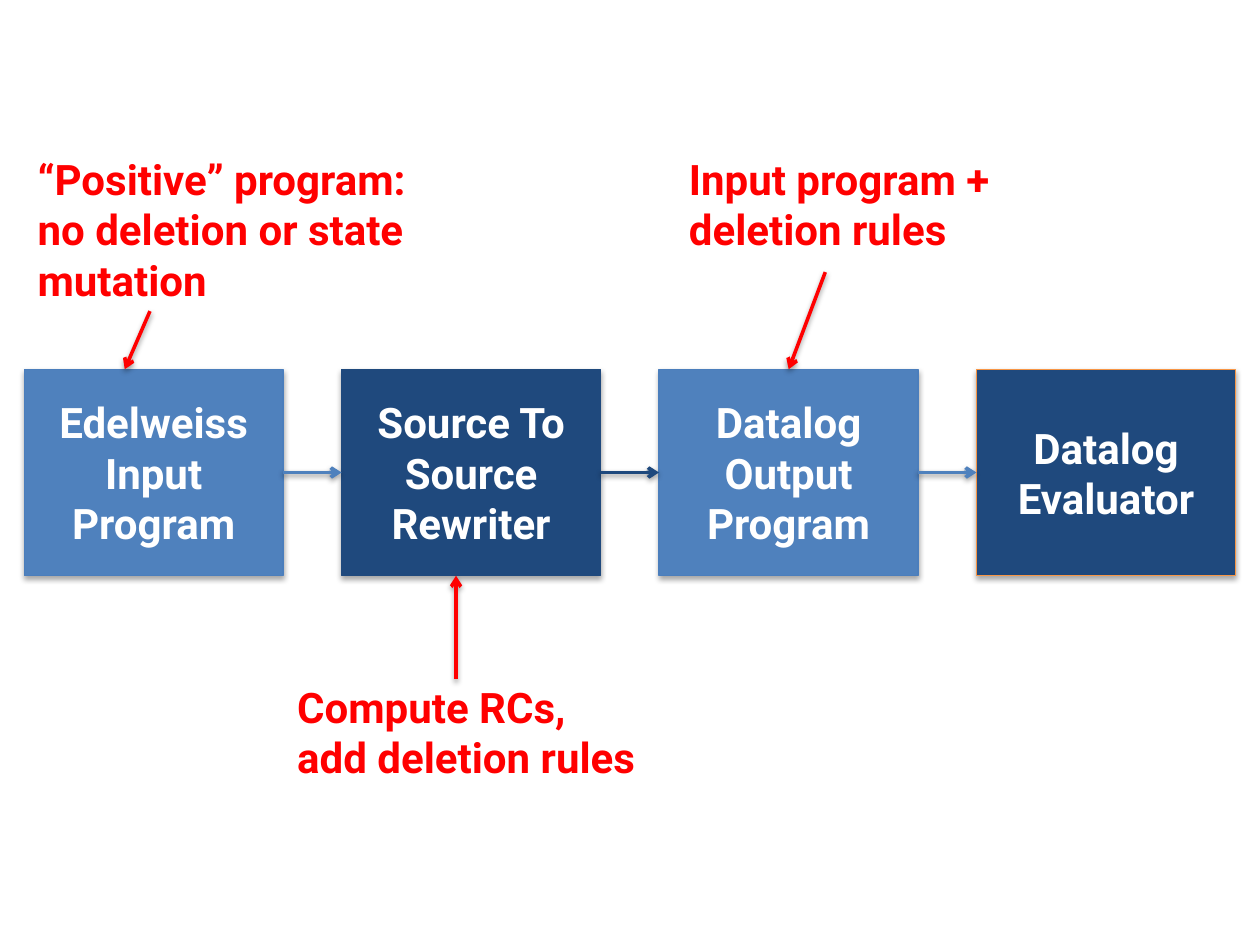
from dataclasses import dataclass

from lxml.etree import SubElement
from pptx import Presentation
from pptx.dml.color import RGBColor
from pptx.enum.shapes import MSO_CONNECTOR, MSO_SHAPE
from pptx.enum.text import MSO_ANCHOR, MSO_AUTO_SIZE, PP_ALIGN
from pptx.oxml.ns import qn
from pptx.util import Pt


@dataclass(frozen=True)
class Theme:
    font: str = "Roboto"
    size: float = 24
    program: str = "4F81BD"
    program_edge: str = "4B7EBC"
    tool: str = "1F497D"
    evaluator_edge: str = "F79646"
    note: str = "FF0000"
    light: str = "FFFFFF"
    shadow: str = "000000"
    edge_width: float = 0.75
    arrow_width: float = 2


THEME = Theme()

STAGES = [
    ("Edelweiss Input Program", THEME.program, THEME.program_edge),
    ("Source To Source Rewriter", THEME.tool, THEME.tool),
    ("Datalog Output Program", THEME.program, THEME.program_edge),
    ("Datalog\nEvaluator", THEME.tool, THEME.evaluator_edge),
]

NOTES = [
    (["“Positive” program:\nno deletion or state\nmutation"],
     (14.4, 84.2, 240.5, 94.3), (85.7, 177.8), (71.3, 211)),
    (["Compute RCs,", "add deletion rules"],
     (162.7, 385.9, 221.8, 65.5), (260.6, 388.1), (260.6, 329)),
    (["Input program +", "deletion rules"],
     (386.6, 84.2, 202.3, 65.5), (471.6, 155.5), (450.7, 211)),
]


def add_shadow(properties, opacity, distance):
    effects = properties.find(qn("a:effectLst"))
    if effects is None:
        effects = SubElement(properties, qn("a:effectLst"))
    shadow = SubElement(effects, qn("a:outerShdw"), blurRad=str(Pt(3.1)),
                        dist=str(Pt(distance)), dir="5400000", rotWithShape="0")
    color = SubElement(shadow, qn("a:srgbClr"), val=THEME.shadow)
    SubElement(color, qn("a:alpha"), val=str(opacity * 1000))


def format_text(frame, color, align):
    for para in frame.paragraphs:
        para.alignment = align
        for span in para.runs:
            span.font.name = THEME.font
            span.font.size = Pt(THEME.size)
            span.font.bold = True
            span.font.color.rgb = RGBColor.from_string(color)


def add_arrow(page, start, end, color):
    arrow = page.shapes.add_connector(
        MSO_CONNECTOR.STRAIGHT, *(Pt(value) for value in (*start, *end)))
    arrow.line.color.rgb = RGBColor.from_string(color)
    arrow.line.width = Pt(THEME.arrow_width)
    properties = arrow._element.spPr
    SubElement(properties.find(qn("a:ln")), qn("a:tailEnd"), type="arrow")
    add_shadow(properties, 38, 1.6)
    return arrow


def add_stage(page, bounds, text, fill, edge):
    box = page.shapes.add_shape(MSO_SHAPE.RECTANGLE, *(Pt(value) for value in bounds))
    box.shadow.inherit = False
    box.fill.solid()
    box.fill.fore_color.rgb = RGBColor.from_string(fill)
    box.line.color.rgb = RGBColor.from_string(edge)
    box.line.width = Pt(THEME.edge_width)
    add_shadow(box._element.spPr, 35, 1.8)
    box.text_frame.text = text
    box.text_frame.word_wrap = True
    box.text_frame.vertical_anchor = MSO_ANCHOR.MIDDLE
    format_text(box.text_frame, THEME.light, PP_ALIGN.CENTER)
    return box


def add_pipeline(page, left, top, width, height):
    gap = 33.4
    stage_width = (width - gap * (len(STAGES) - 1)) / len(STAGES)
    middle = top + height / 2
    previous = None
    for index, (text, fill, edge) in enumerate(STAGES):
        x = left + index * (stage_width + gap)
        box = add_stage(page, (x, top, stage_width, height), text, fill, edge)
        if previous is not None:
            arrow = add_arrow(page, (x - gap, middle), (x, middle), STAGES[index - 1][1])
            arrow.begin_connect(previous, 3)
            arrow.end_connect(box, 1)
        previous = box


def add_note(page, paragraphs, bounds, start, end):
    box = page.shapes.add_textbox(*(Pt(value) for value in bounds))
    frame = box.text_frame
    frame.word_wrap = False
    frame.auto_size = MSO_AUTO_SIZE.SHAPE_TO_FIT_TEXT
    frame.paragraphs[0].text = paragraphs[0]
    for text in paragraphs[1:]:
        frame.add_paragraph().text = text
    format_text(frame, THEME.note, PP_ALIGN.LEFT)
    add_arrow(page, start, end, THEME.note)


def main():
    deck = Presentation()
    deck.slide_width, deck.slide_height = Pt(720), Pt(540)
    page = deck.slides.add_slide(deck.slide_layouts[6])
    add_pipeline(page, 13.8, 211, 692.2, 118)
    for note in NOTES:
        add_note(page, *note)
    deck.save("out.pptx")


if __name__ == "__main__":
    main()
